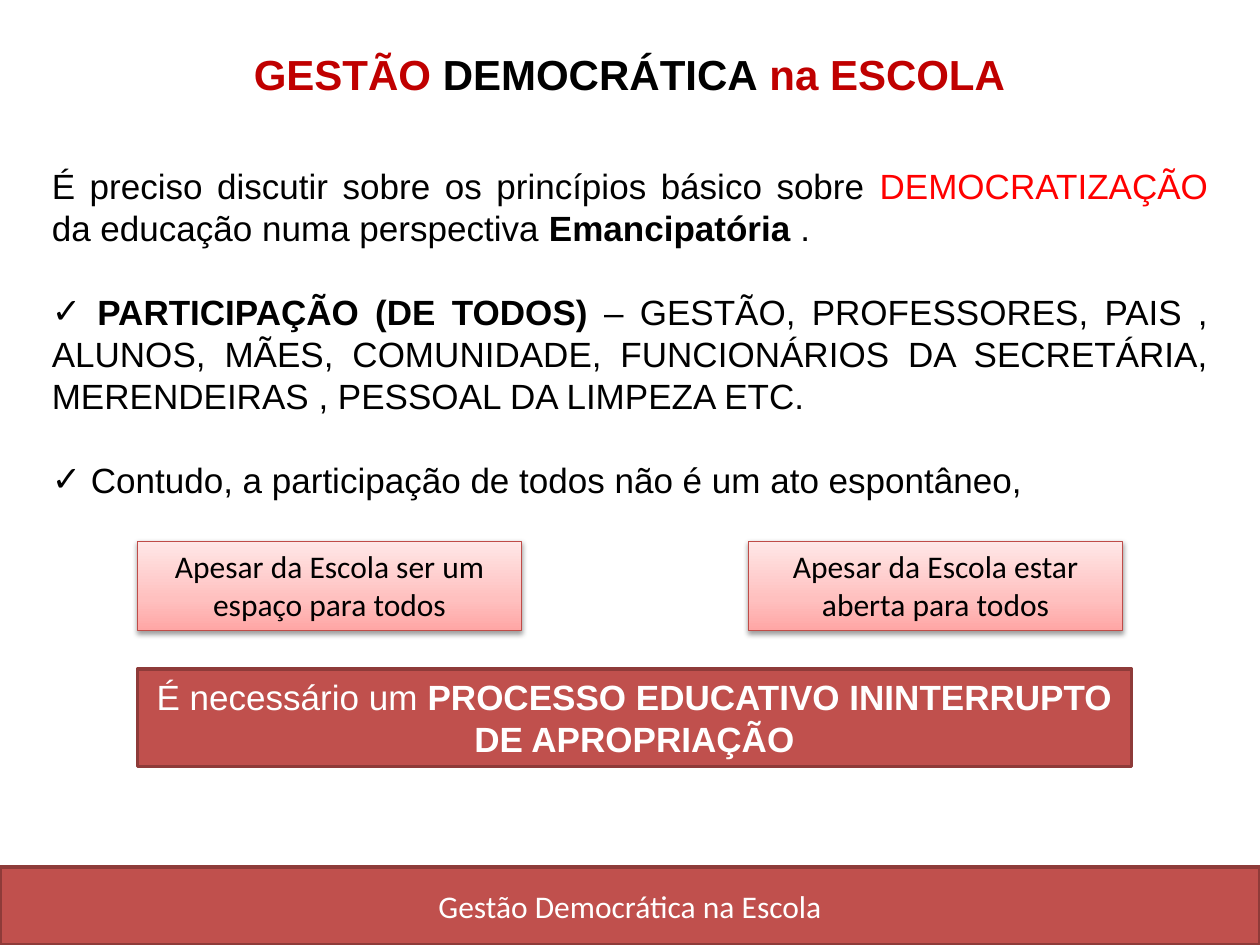
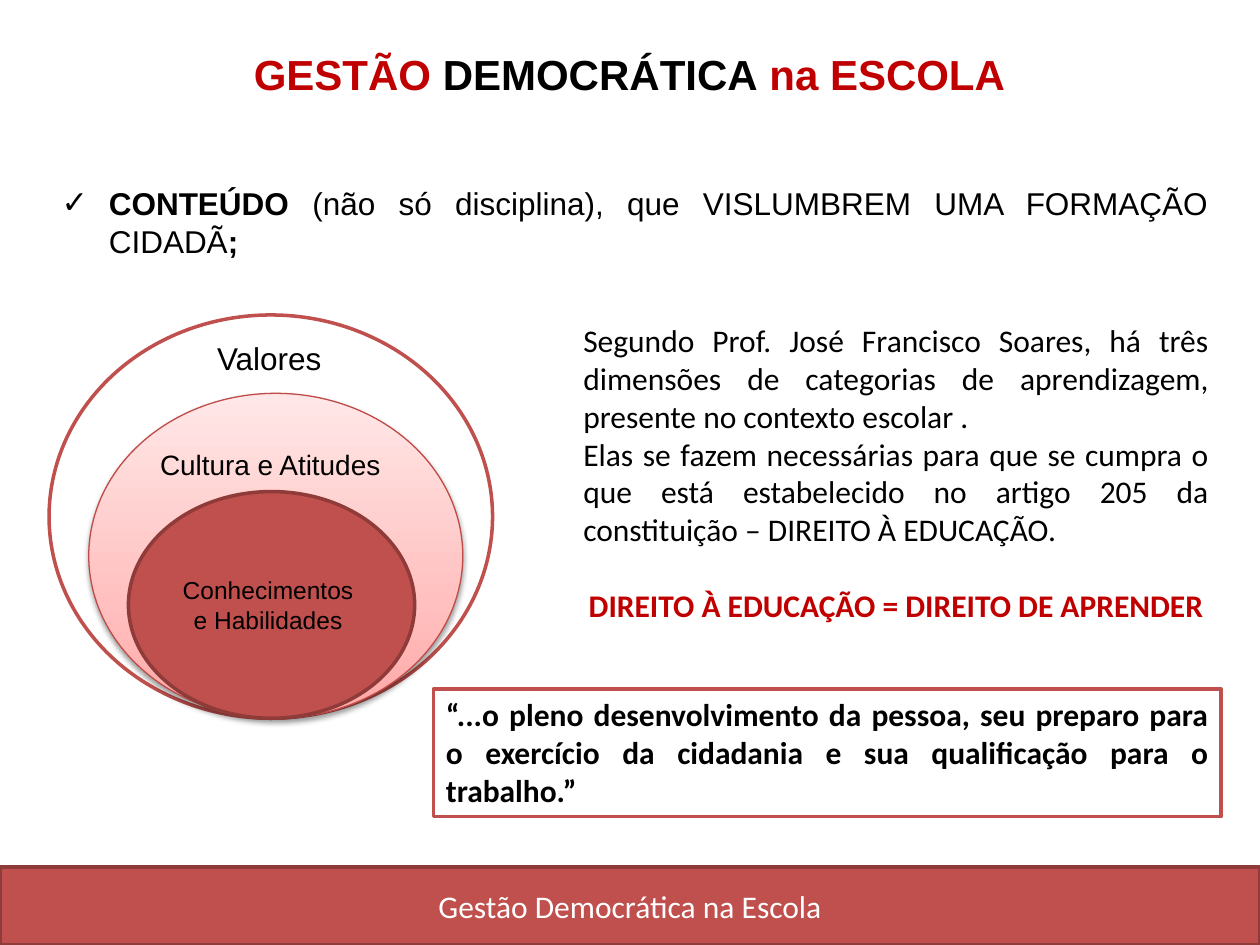
from copy import deepcopy

from lxml.etree import SubElement
from pptx import Presentation
from pptx.dml.color import RGBColor
from pptx.enum.shapes import MSO_SHAPE as Kind
from pptx.enum.text import MSO_ANCHOR as Anchor, MSO_AUTO_SIZE as Fit, PP_ALIGN as Align
from pptx.oxml.ns import qn
from pptx.util import Cm, Pt

RED = RGBColor(0xC0, 0x50, 0x4D)
EDGE = RGBColor(0x8E, 0x3B, 0x39)
RIM = RGBColor(0xBF, 0x4C, 0x48)
DARK = RGBColor(0xC0, 0x00, 0x00)
VIVID = RGBColor(0xFF, 0x00, 0x00)
BLACK = RGBColor(0x00, 0x00, 0x00)
WHITE = RGBColor(0xFF, 0xFF, 0xFF)
FADE = [(0, RGBColor(0xFF, 0xA6, 0xA5)), (0.35, RGBColor(0xFF, 0xC0, 0xBF)),
        (1, RGBColor(0xFF, 0xE7, 0xE7))]
TITLE = [("GESTÃO ", True, DARK), ("DEMOCRÁTICA", True, BLACK), (" na ESCOLA", True, DARK)]
HEAD = (4.75, 0.86, 15.88, 1.27)
BAND = (0, 17.48, 25.4, 1.57)


def place(shape, box):
    """Move a shape to a box given in centimetres."""
    shape.left, shape.top, shape.width, shape.height = map(Cm, box)


def write(shape, paras, size, font="Arial", align=Align.CENTER, anchor=Anchor.TOP,
          gap=0, wrap=True):
    """Fill a shape with paragraphs, each a list of (text, bold, colour) runs."""
    frame = shape.text_frame
    frame.auto_size, frame.word_wrap = Fit.NONE, wrap
    frame.vertical_anchor = anchor
    for i, runs in enumerate(paras):
        para = frame.add_paragraph() if i else frame.paragraphs[0]
        para.alignment = align
        para.space_before = Pt(gap if i else 0)
        for text, bold, tint in runs:
            run = para.add_run()
            run.text = text
            face = run.font
            face.name, face.size, face.bold = font, Pt(size), bold
            face.color.rgb = tint
    return frame.paragraphs


def mark(para, char=None, indent=0):
    """Give a paragraph a bullet, or none, with a hanging indent."""
    props = para._p.get_or_add_pPr()
    props.set("marL", str(Cm(indent)))
    props.set("indent", str(-Cm(indent)))
    if char:
        SubElement(props, qn("a:buFont"), typeface="Arial")
        SubElement(props, qn("a:buChar"), char=char)
    else:
        SubElement(props, qn("a:buNone"))


def block(slide, kind, box, fill=RED, line=EDGE, width=2):
    """Add a plain shape with a solid fill and a line."""
    shape = slide.shapes.add_shape(kind, *map(Cm, box))
    shape.shadow.inherit = False
    shape.fill.solid()
    shape.fill.fore_color.rgb = fill
    shape.line.color.rgb = line
    shape.line.width = Pt(width)
    return shape


def blush(slide, kind, box):
    """Add a shape with the pink gradient and a soft shadow."""
    shape = block(slide, kind, box, line=RIM, width=0.75)
    shape.fill.gradient()
    shape.fill.gradient_angle = 90
    props = shape._element.spPr
    stops = props.find(".//" + qn("a:gsLst"))
    stops.append(deepcopy(stops[0]))
    for stop, (pos, tint) in zip(shape.fill.gradient_stops, FADE):
        stop.position, stop.color.rgb = pos, tint
    glow = SubElement(props.find(qn("a:effectLst")), qn("a:outerShdw"), blurRad=str(Pt(3.1)),
                      dist=str(Pt(1.6)), dir="5400000", rotWithShape="0")
    tint = SubElement(glow, qn("a:srgbClr"), val="000000")
    SubElement(tint, qn("a:alpha"), val="38000")
    return shape


def label(slide, box, paras, size, **style):
    """Add a text box."""
    return write(slide.shapes.add_textbox(*map(Cm, box)), paras, size, **style)


def base(deck):
    """Add a slide with the shared title and footer band."""
    slide = deck.slides.add_slide(deck.slide_layouts[1])
    place(slide.shapes.title, HEAD)
    write(slide.shapes.title, [TITLE], 24)
    band = block(slide, Kind.RECTANGLE, BAND)
    write(band, [[("Gestão Democrática na Escola", False, WHITE)]], 18, "Calibri",
          anchor=Anchor.MIDDLE)
    return slide


def points(slide, box, paras, size, marks, gap=0, indent=0):
    """Fill the body placeholder with justified text, bulleted where marked."""
    body = slide.placeholders[1]
    place(body, box)
    lines = write(body, paras, size, align=Align.JUSTIFY, gap=gap)
    for para, char in zip(lines, marks):
        mark(para, char, indent)


def notes(slide, box):
    """Draw two pink notes above the red conclusion."""
    x, y, w, h = box
    left, right = (x, y, 7.75, 1.8), (x + 12.32, y, 7.54, 1.8)
    for spot, text in ((left, "Apesar da Escola ser um espaço para todos"),
                       (right, "Apesar da Escola estar aberta para todos")):
        write(blush(slide, Kind.RECTANGLE, spot), [[(text, False, BLACK)]], 18, "Calibri")
    close = block(slide, Kind.RECTANGLE, (x, y + h - 1.96, w, 1.96))
    write(close, [[("É necessário um ", False, WHITE),
                   ("PROCESSO EDUCATIVO ININTERRUPTO DE APROPRIAÇÃO", True, WHITE)]], 20)


def rings(slide, box):
    """Nest three ellipses that share their lowest point."""
    x, y, w, h = box
    sizes = [(w, h), (7.54, 6.55), (5.77, 4.57)]
    outer, middle, inner = [(x + 0.8 * i, y + h - tall, wide, tall)
                            for i, (wide, tall) in enumerate(sizes)]
    block(slide, Kind.OVAL, outer, WHITE, RED)
    blush(slide, Kind.OVAL, middle)
    core = block(slide, Kind.OVAL, inner)
    write(core, [[("Conhecimentos ", False, BLACK)], [("e Habilidades ", False, BLACK)]], 14,
          anchor=Anchor.MIDDLE)
    label(slide, (x + 1.96, y + 2.54, 5, 0.94), [[("Cultura e Atitudes", False, BLACK)]], 16,
          wrap=False)
    label(slide, (x + 3.12, y + 0.36, 2.64, 1.02), [[("Valores", False, BLACK)]], 18,
          wrap=False)


def thesis(slide, box):
    """Write the argument and its red conclusion."""
    paras = [
        [("Segundo Prof. José Francisco Soares, há três dimensões de categorias de "
          "aprendizagem, presente no contexto escolar . ", False, BLACK)],
        [("Elas se fazem necessárias para que se cumpra o que está estabelecido no "
          "artigo 205 da constituição – DIREITO À EDUCAÇÃO. ", False, BLACK)],
        [("DIREITO À EDUCAÇÃO = DIREITO DE APRENDER", True, DARK)],
    ]
    lines = label(slide, box, paras, 18, font="Calibri", align=Align.JUSTIFY)
    lines[-1].alignment = Align.CENTER
    lines[-1].space_before = Pt(22)


def quote(slide, box):
    """Frame the quotation from the constitution."""
    text = ("“...o pleno desenvolvimento da pessoa, seu preparo para o exercício da "
            "cidadania e sua qualificação para o trabalho.”")
    write(block(slide, Kind.RECTANGLE, box, WHITE, RED), [[(text, True, BLACK)]], 18,
          "Calibri", Align.JUSTIFY)


def share(deck):
    """Build the slide on participation."""
    slide = base(deck)
    paras = [
        [("É preciso discutir sobre os princípios básico sobre ", False, BLACK),
         ("DEMOCRATIZAÇÃO", False, VIVID),
         (" da educação numa perspectiva ", False, BLACK),
         ("Emancipatória", True, BLACK), (" .", False, BLACK)],
        [(" ", False, BLACK), ("PARTICIPAÇÃO (DE TODOS) ", True, BLACK),
         ("– GESTÃO, PROFESSORES, PAIS , ALUNOS, MÃES, COMUNIDADE, FUNCIONÁRIOS DA "
          "SECRETÁRIA, MERENDEIRAS , PESSOAL DA LIMPEZA ETC. ", False, BLACK)],
        [(" Contudo, a participação de todos não é um ato espontâneo, ", False, BLACK)],
    ]
    points(slide, (0.79, 3.18, 23.82, 7.09), paras, 20, (None, "✓", "✓"), gap=24)
    notes(slide, (2.77, 10.91, 20.04, 4.54))


def learn(deck):
    """Build the slide on content and learning."""
    slide = base(deck)
    paras = [[("CONTEÚDO ", True, BLACK),
              ("(não só disciplina), que VISLUMBREM UMA FORMAÇÃO CIDADÃ", False, BLACK),
              (";", True, BLACK)]]
    points(slide, (0.99, 3.58, 23.62, 1.8), paras, 18, "✓", indent=0.95)
    rings(slide, (0.99, 6.35, 8.94, 8.13))
    thesis(slide, (11.51, 6.35, 13.11, 6.4))
    quote(slide, (8.74, 13.89, 15.88, 2.57))


def main():
    """Build and save the deck."""
    deck = Presentation()
    deck.slide_width, deck.slide_height = Cm(25.4), Cm(19.05)
    share(deck)
    learn(deck)
    deck.save("out.pptx")


if __name__ == "__main__":
    main()
